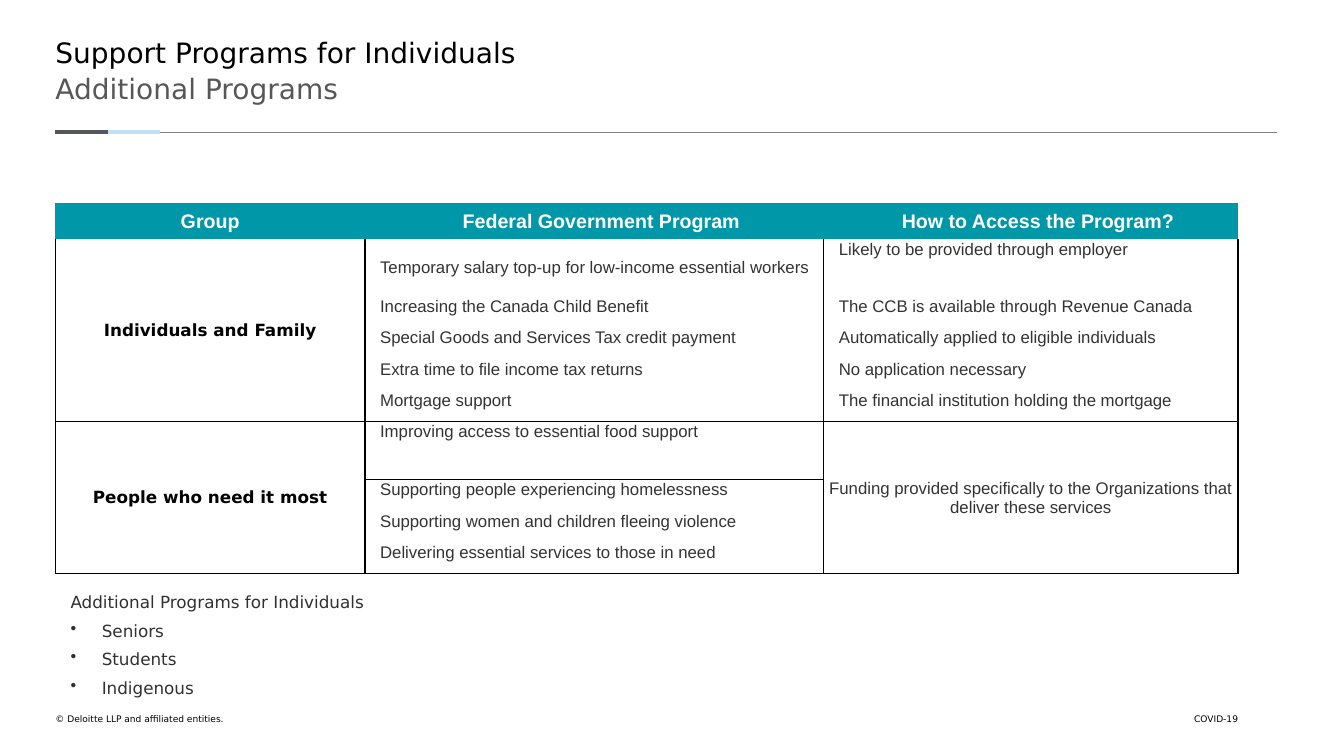
from lxml import etree
from pptx import Presentation
from pptx.dml.color import RGBColor
from pptx.enum.shapes import MSO_CONNECTOR
from pptx.enum.text import MSO_ANCHOR, PP_ALIGN
from pptx.oxml.ns import qn
from pptx.util import Inches, Pt

BLACK = RGBColor(0x00, 0x00, 0x00)
WHITE = RGBColor(0xFF, 0xFF, 0xFF)
TEAL = RGBColor(0x00, 0x97, 0xA9)
SUBTITLE_GRAY = RGBColor(0x57, 0x57, 0x57)
CELL_GRAY = RGBColor(0x33, 0x33, 0x33)
LIST_GRAY = RGBColor(0x31, 0x31, 0x31)
RULE_GRAY = RGBColor(0x80, 0x80, 0x80)
RULE_DARK = RGBColor(0x53, 0x56, 0x5A)
RULE_BLUE = RGBColor(0xC0, 0xE1, 0xF5)
SANS = "DejaVu Sans"
ARIAL = "Arial"
PLAIN_TABLE = "{2D5ABB26-0587-4C30-8999-92F81FD0307C}"
MARGIN = 0.55

HEADINGS = ["Group", "Federal Government Program", "How to Access the Program?"]
COLUMN_WIDTHS = [3.07, 4.55, 4.11]
HEADING_HEIGHT, FIRST_HEIGHTS, ROW_HEIGHT = 0.36, [0.57, 0.58], 0.31
FUNDING = "Funding provided specifically to the Organizations that deliver these services"
GROUPS = [
    ("Individuals and Family", [
        ("Temporary salary top-up for low-income essential workers",
         "Likely to be provided through employer"),
        ("Increasing the Canada Child Benefit", "The CCB is available through Revenue Canada"),
        ("Special Goods and Services Tax credit payment",
         "Automatically applied to eligible individuals"),
        ("Extra time to file income tax returns", "No application necessary"),
        ("Mortgage support", "The financial institution holding the mortgage"),
    ]),
    ("People who need it most", [
        ("Improving access to essential food support", FUNDING),
        ("Supporting people experiencing homelessness", None),
        ("Supporting women and children fleeing violence", None),
        ("Delivering essential services to those in need", None),
    ]),
]


def style(para, size, color, name=SANS, bold=False):
    font = para.font
    for target in [font] + [span.font for span in para.runs]:
        target.size, target.name, target.bold = Pt(size), name, bold
        target.color.rgb = color


def add_text(page, left, top, width, height, lines, size, color, align=PP_ALIGN.LEFT):
    """Add a box without insets, one paragraph per line."""
    box = page.shapes.add_textbox(Inches(left), Inches(top), Inches(width), Inches(height))
    frame = box.text_frame
    frame.word_wrap = True
    frame.margin_left = frame.margin_right = frame.margin_top = frame.margin_bottom = 0
    frame.text = "\n".join(lines)
    for para in frame.paragraphs:
        para.alignment = align
        style(para, size, color)
    return frame


def add_header(page, left, top, width):
    add_text(page, left, top, width, 0.37, ["Support Programs for Individuals"], 20, BLACK)
    add_text(page, left, top + 0.36, width, 0.83, ["Additional Programs"], 20, SUBTITLE_GRAY)
    rule_y = Inches(top + 0.96)
    for start, end, color, weight in [(1, 12.12, RULE_GRAY, 0.5), (0, 0.52, RULE_DARK, 3),
                                      (0.52, 1.04, RULE_BLUE, 3)]:
        rule = page.shapes.add_connector(MSO_CONNECTOR.STRAIGHT, Inches(left + start), rule_y,
                                         Inches(left + end), rule_y)
        rule.line.color.rgb = color
        rule.line.width = Pt(weight)
        etree.SubElement(rule._element.spPr, qn("a:effectLst"))


def add_borders(cell, sides):
    """Draw thin black borders on the given sides, named from L, R, T and B in that order."""
    properties = cell._tc.get_or_add_tcPr()
    for side in sides:
        line = etree.SubElement(properties, qn(f"a:ln{side}"), w=str(Pt(1)))
        fill = etree.SubElement(line, qn("a:solidFill"))
        etree.SubElement(fill, qn("a:srgbClr"), val=str(BLACK))


def fill_cell(cell, text, size, color, name, bold=False, centered=False, indent=0.01):
    cell.margin_left, cell.margin_right = Inches(indent), Inches(0.01)
    cell.margin_top, cell.margin_bottom = Inches(0.01), 0
    cell.text = text
    para = cell.text_frame.paragraphs[0]
    style(para, size, color, name, bold)
    if centered:
        para.alignment = PP_ALIGN.CENTER
        cell.vertical_anchor = MSO_ANCHOR.MIDDLE


def add_group(table, first, group, programs):
    """Fill one block of rows, starting at row number first."""
    last = first + len(programs) - 1
    shared_access = programs[-1][1] is None
    for row, (program, access) in enumerate(programs, first):
        fill_cell(table.cell(row, 0), group if row == first else "", 12, BLACK, SANS, True, True)
        fill_cell(table.cell(row, 1), program, 12, CELL_GRAY, ARIAL, indent=0.15)
        fill_cell(table.cell(row, 2), access or "", 12, CELL_GRAY, ARIAL,
                  centered=shared_access, indent=0.01 if shared_access else 0.15)
        for column in range(3):
            cell = table.cell(row, column)
            merged = column == 0 or (column == 2 and shared_access)
            top = "T" if row == first and first > 1 else ""
            bottom = "B" if row == last or merged and row == first else ""
            add_borders(cell, "LR" + top + bottom)
            cell.fill.background()
    table.cell(first, 0).merge(table.cell(last, 0))
    if shared_access:
        table.cell(first, 2).merge(table.cell(last, 2))


def add_program_table(page, left, top):
    heights = [HEADING_HEIGHT]
    for first_height, (_, programs) in zip(FIRST_HEIGHTS, GROUPS):
        heights += [first_height] + [ROW_HEIGHT] * (len(programs) - 1)
    frame = page.shapes.add_table(len(heights), len(HEADINGS), Inches(left), Inches(top),
                                  Inches(sum(COLUMN_WIDTHS)), Inches(sum(heights)))
    table = frame.table
    table.first_row = table.horz_banding = False
    next(frame._element.iter(qn("a:tableStyleId"))).text = PLAIN_TABLE
    for column, width in zip(table.columns, COLUMN_WIDTHS):
        column.width = Inches(width)
    for row, height in zip(table.rows, heights):
        row.height = Inches(height)
    for column, heading in enumerate(HEADINGS):
        cell = table.cell(0, column)
        fill_cell(cell, heading, 14, WHITE, ARIAL, True, True, 0.15 if column else 0.01)
        cell.fill.solid()
        cell.fill.fore_color.rgb = TEAL
    first = 1
    for group, programs in GROUPS:
        add_group(table, first, group, programs)
        first += len(programs)
    table.cell(1, 1).vertical_anchor = MSO_ANCHOR.MIDDLE


def add_audience_list(page, left, top, width):
    lines = ["Additional Programs for Individuals", "Seniors", "Students", "Indigenous"]
    frame = add_text(page, left, top, width, 1.06, lines, 12, LIST_GRAY)
    for para in frame.paragraphs[1:]:
        para.space_before = Pt(6)
        properties = para._p.get_or_add_pPr()
        properties.set("marL", str(Inches(0.31)))
        properties.set("indent", str(-Inches(0.31)))
        bullet = etree.Element(qn("a:buChar"), char="•")
        properties.find(qn("a:defRPr")).addprevious(bullet)


def add_footer(page, left, top, right):
    add_text(page, left, top, 5.86, 0.22, ["© Deloitte LLP and affiliated entities."], 6.5, BLACK)
    add_text(page, right - 2.8, top, 2.8, 0.13, ["COVID-19"], 6.5, BLACK, PP_ALIGN.RIGHT)


def main():
    deck = Presentation()
    deck.slide_width, deck.slide_height = Inches(13.33), Inches(7.5)
    page = deck.slides.add_slide(deck.slide_layouts[6])
    add_header(page, MARGIN, 0.35, 12.24)
    add_program_table(page, MARGIN, 2.01)
    add_audience_list(page, 0.7, 5.87, 11.44)
    add_footer(page, MARGIN, 7.08, MARGIN + sum(COLUMN_WIDTHS))
    deck.save("out.pptx")


if __name__ == "__main__":
    main()
